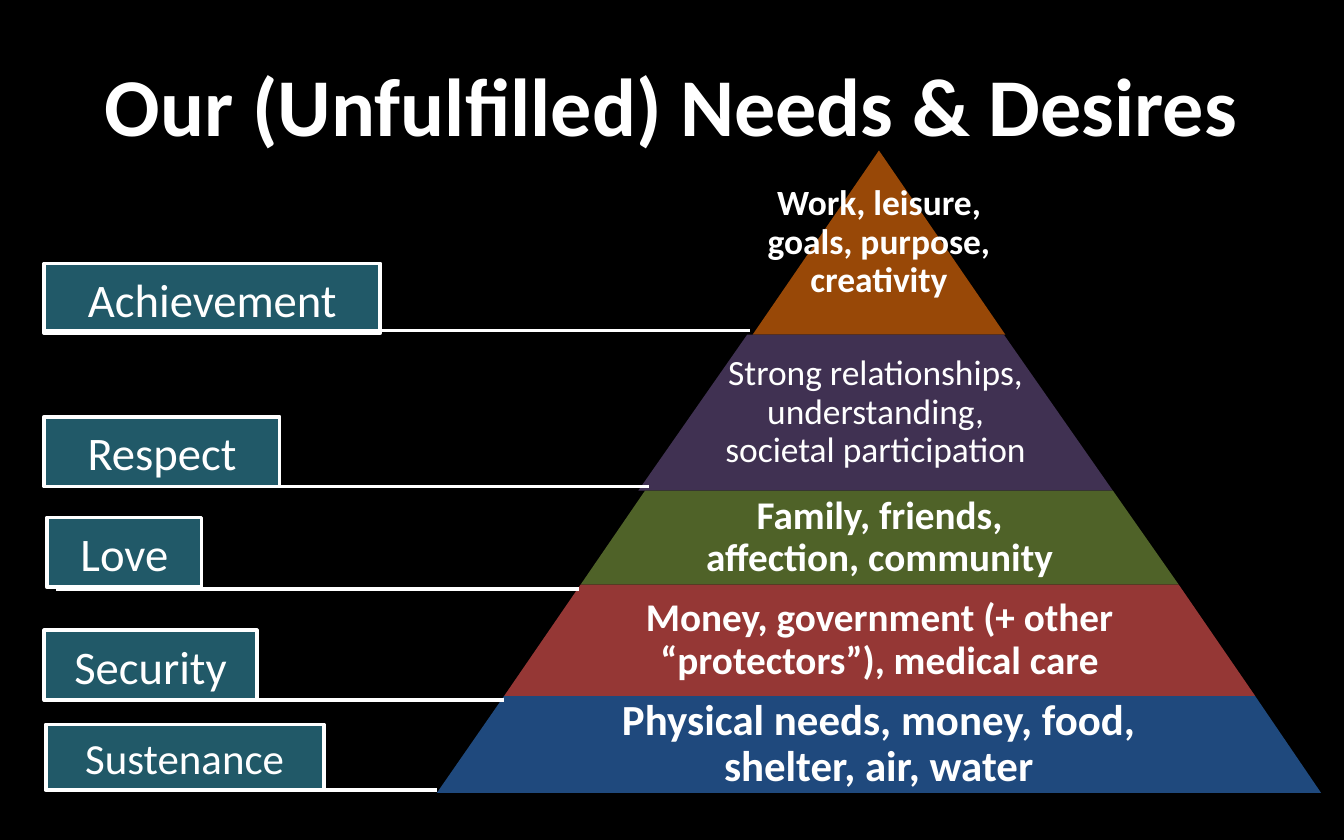
"""Build a slide that pairs human needs with the layers of a pyramid."""
from lxml import etree
from pptx import Presentation
from pptx.dml.color import RGBColor
from pptx.enum import shapes, text
from pptx.oxml import ns
from pptx.util import Inches, Pt

BLACK = RGBColor(0x00, 0x00, 0x00)
WHITE = RGBColor(0xFF, 0xFF, 0xFF)
TEAL = RGBColor(0x21, 0x59, 0x68)
ORANGE = RGBColor(0x98, 0x48, 0x07)
PURPLE = RGBColor(0x40, 0x31, 0x52)
GREEN = RGBColor(0x4F, 0x62, 0x28)
RED = RGBColor(0x95, 0x37, 0x35)
BLUE = RGBColor(0x1F, 0x49, 0x7D)

FONT = "Calibri"
PYRAMID_TOP = 1.12
LABEL_INSET = 0.18

# Bottom edge, top corners, bottom corners, colour, wording, size, bold
LAYERS = [
    (2.49, (6.54, 6.54), (5.6, 7.48), ORANGE,
     "Work, leisure, goals, purpose, creativity", 19, True),
    (3.65, (5.56, 7.47), (4.75, 8.28), PURPLE,
     "Strong relationships, understanding, societal participation", 19, False),
    (4.35, (4.8, 8.28), (4.32, 8.77), GREEN,
     "Family, friends, affection, community", 21, True),
    (5.18, (4.32, 8.77), (3.75, 9.34), RED,
     "Money, government (+ other “protectors”), medical care", 21, True),
    (5.9, (3.75, 9.34), (3.25, 9.83), BLUE,
     "Physical needs, money, food, shelter, air, water", 23, True),
]

# Wording, left, top, width, height, size, start and end of the rule below
NEEDS = [
    ("Achievement", 0.33, 1.96, 2.5, 0.52, 25, 0.33, 5.58, 2.46),
    ("Respect", 0.33, 3.1, 1.75, 0.52, 25, 0.5, 4.83, 3.62),
    ("Love", 0.35, 3.85, 1.15, 0.52, 25, 0.42, 4.31, 4.38),
    ("Security", 0.33, 4.69, 1.58, 0.52, 25, 0.42, 3.75, 5.21),
    ("Sustenance", 0.34, 5.39, 2.07, 0.49, 23, 0.42, 3.25, 5.88),
]


def write(frame, wording, size, bold=False, spacing=1.0):
    """Put one centred white paragraph in the middle of a text frame."""
    frame.word_wrap = True
    frame.vertical_anchor = text.MSO_ANCHOR.MIDDLE
    paragraph = frame.paragraphs[0]
    paragraph.alignment = text.PP_ALIGN.CENTER
    paragraph.line_spacing = spacing
    run = paragraph.add_run()
    run.text = wording
    run.font.name = FONT
    run.font.size = Pt(size)
    run.font.bold = bold
    run.font.color.rgb = WHITE


def add_title(slide, wording):
    """Add the slide heading."""
    heading = slide.shapes.add_textbox(
        Inches(0.5), Inches(0.25), Inches(9), Inches(1.04))
    write(heading.text_frame, wording, 44, bold=True)


def add_layer(slide, top, bottom, top_corners, bottom_corners, colour,
              wording, size, bold):
    """Add one pyramid layer with its text."""
    corners = [(top_corners[0], top), (top_corners[1], top),
               (bottom_corners[1], bottom)]
    start = Inches(bottom_corners[0]), Inches(bottom)
    builder = slide.shapes.build_freeform(*start)
    builder.add_line_segments([(Inches(x), Inches(y)) for x, y in corners])
    layer = builder.convert_to_shape()
    layer.shadow.inherit = False
    layer.fill.solid()
    layer.fill.fore_color.rgb = colour
    layer.line.fill.background()
    is_tip = top_corners[0] == top_corners[1]
    width = bottom_corners[1] - bottom_corners[0]
    frame = layer.text_frame
    frame.margin_top = frame.margin_bottom = Inches(0.03)
    frame.margin_left = frame.margin_right = Inches(
        0.03 if is_tip else LABEL_INSET * width)
    write(frame, wording, size, bold, spacing=0.9)


def add_need(slide, wording, left, top, width, height, size):
    """Add the outlined box that names a need."""
    box = slide.shapes.add_shape(
        shapes.MSO_SHAPE.RECTANGLE, Inches(left), Inches(top),
        Inches(width), Inches(height))
    box.shadow.inherit = False
    box.fill.solid()
    box.fill.fore_color.rgb = TEAL
    box.line.color.rgb = WHITE
    box.line.width = Pt(2)
    write(box.text_frame, wording, size)


def add_rule(slide, start, end, height):
    """Add the line that ties a need to its layer."""
    rule = slide.shapes.add_connector(
        shapes.MSO_CONNECTOR.STRAIGHT, Inches(start), Inches(height),
        Inches(end), Inches(height))
    rule.line.color.rgb = WHITE
    rule.line.width = Pt(2)
    etree.SubElement(rule._element.spPr, ns.qn("a:effectLst"))


def main():
    """Assemble and save the slide."""
    deck = Presentation()
    deck.slide_width, deck.slide_height = Inches(10), Inches(6.25)
    slide = deck.slides.add_slide(deck.slide_layouts[6])
    slide.background.fill.solid()
    slide.background.fill.fore_color.rgb = BLACK

    add_title(slide, "Our (Unfulfilled) Needs & Desires")
    top = PYRAMID_TOP
    for bottom, *details in LAYERS:
        add_layer(slide, top, bottom, *details)
        top = bottom
    for *need, start, end, height in reversed(NEEDS):
        add_need(slide, *need)
    for *need, start, end, height in NEEDS:
        add_rule(slide, start, end, height)
    deck.save("out.pptx")


if __name__ == "__main__":
    main()
